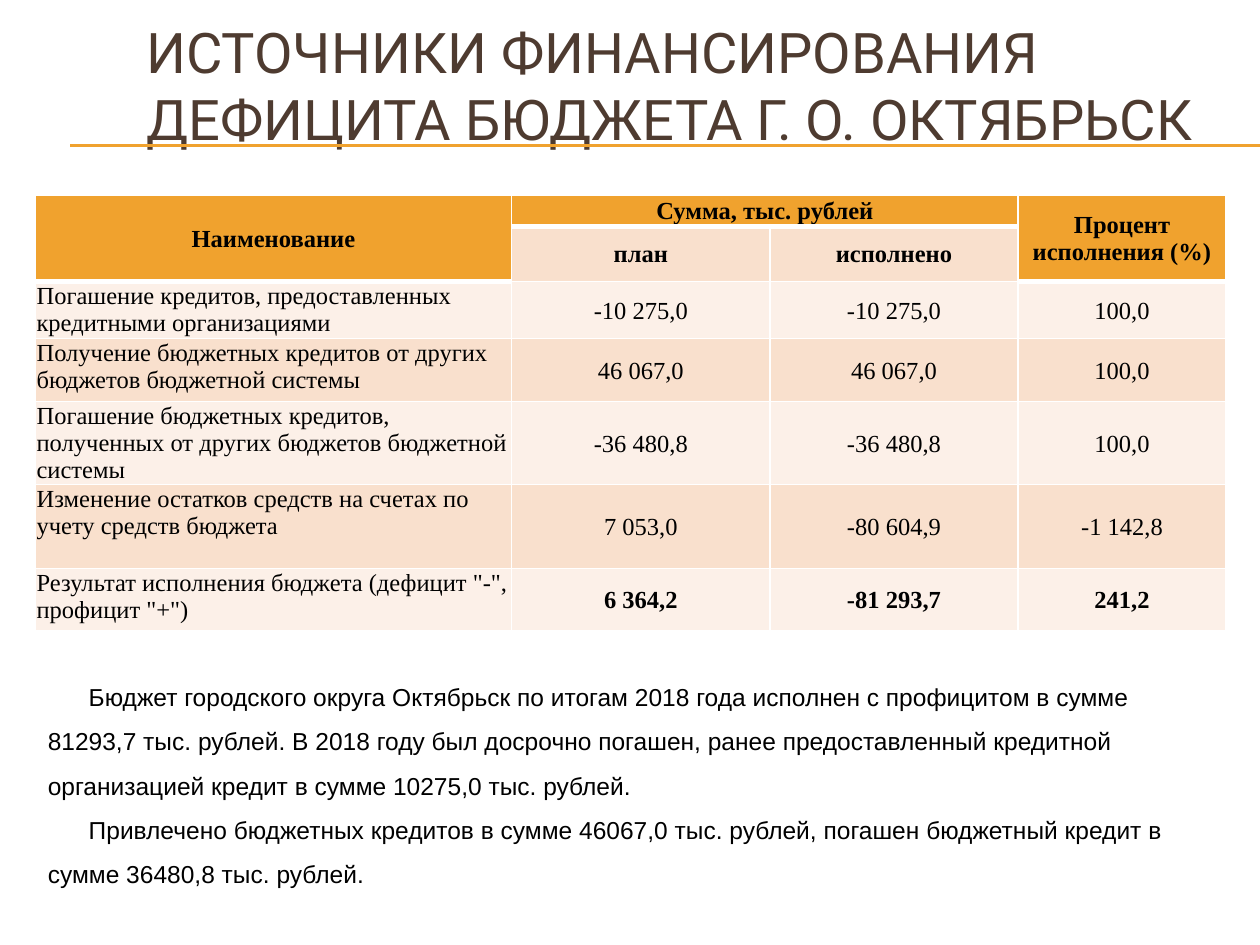
from dataclasses import dataclass

from lxml import etree
from pptx import Presentation
from pptx.dml.color import RGBColor
from pptx.enum.shapes import MSO_CONNECTOR
from pptx.enum.text import MSO_ANCHOR, MSO_AUTO_SIZE, PP_ALIGN
from pptx.oxml import parse_xml
from pptx.oxml.ns import nsdecls, qn
from pptx.util import Pt

STRAIGHT = MSO_CONNECTOR.STRAIGHT
TOP, MIDDLE = MSO_ANCHOR.TOP, MSO_ANCHOR.MIDDLE
LEFT, CENTER = PP_ALIGN.LEFT, PP_ALIGN.CENTER


@dataclass(frozen=True)
class Theme:
    accent: str = "F0A22E"
    light: str = "FCF0E8"
    medium: str = "F9E0CD"
    white: str = "FFFFFF"
    brown: str = "4E3B30"
    black: str = "000000"
    title_font: str = "Roboto"
    table_font: str = "Times New Roman"
    body_font: str = "Arial"
    title_size: int = 32
    text_size: int = 14
    thin: int = 1
    thick: int = 3


@dataclass(frozen=True)
class Box:
    left: float
    top: float
    width: float
    height: float

    def lengths(self) -> tuple:
        return Pt(self.left), Pt(self.top), Pt(self.width), Pt(self.height)


@dataclass(frozen=True)
class BudgetRow:
    name: str
    plan: str
    actual: str
    percent: str
    height: float
    bold: bool = False

    def texts(self) -> tuple:
        return self.name, self.plan, self.actual, self.percent


THEME = Theme()
TITLE = "ИСТОЧНИКИ ФИНАНСИРОВАНИЯ ДЕФИЦИТА БЮДЖЕТА Г. О. ОКТЯБРЬСК"
TITLE_BOX = Box(76.3, 15.1, 625.7, 66.2)
TABLE_BOX = Box(20.2, 111.6, 680.4, 248.8)
NOTE_BOX = Box(20.2, 378, 680.4, 151.2)
RULE_TOPS = (82.8, 83.5)
COLUMN_WIDTHS = (272.2, 147.6, 141.8, 118.8)
ROWS = (
    BudgetRow("Наименование", "Сумма, тыс. рублей", "", "Процент исполнения (%)", 17.7, True),
    BudgetRow("", "план", "исполнено", "", 31.4, True),
    BudgetRow("Погашение кредитов, предоставленных кредитными организациями",
              "-10 275,0", "-10 275,0", "100,0", 32.6),
    BudgetRow("Получение бюджетных кредитов от других бюджетов бюджетной системы",
              "46 067,0", "46 067,0", "100,0", 36),
    BudgetRow("Погашение бюджетных кредитов, полученных от других бюджетов бюджетной системы",
              "-36 480,8", "-36 480,8", "100,0", 47.4),
    BudgetRow("Изменение остатков средств на счетах по учету средств бюджета",
              "7 053,0", "-80 604,9", "-1 142,8", 48),
    BudgetRow('Результат исполнения бюджета (дефицит "-", профицит "+")',
              "6 364,2", "-81 293,7", "241,2", 35.7, True),
)
MERGES = (((0, 0), (1, 0)), ((0, 1), (0, 2)), ((0, 3), (1, 3)))
NOTES = (
    "Бюджет городского округа Октябрьск по итогам 2018 года исполнен с профицитом в сумме "
    "81293,7 тыс. рублей. В 2018 году был досрочно погашен, ранее предоставленный кредитной "
    "организацией кредит в сумме 10275,0 тыс. рублей.",
    "Привлечено бюджетных кредитов в сумме 46067,0 тыс. рублей, погашен бюджетный кредит в "
    "сумме 36480,8 тыс. рублей.",
)


def style_font(p, name: str, size: float, color: str, bold: bool = False) -> None:
    p.font.name = name
    p.font.size = Pt(size)
    p.font.bold = bold
    p.font.color.rgb = RGBColor.from_string(color)


def add_rule(s, top: float) -> None:
    rule = s.shapes.add_connector(STRAIGHT, Pt(40.3), Pt(top), Pt(720), Pt(top))
    rule.line.color.rgb = RGBColor.from_string(THEME.accent)
    rule.line.width = Pt(0.75)
    etree.SubElement(rule._element.spPr, qn("a:effectLst"))


def add_title(s) -> None:
    sp = s.shapes.title
    sp.left, sp.top, sp.width, sp.height = TITLE_BOX.lengths()
    tf = sp.text_frame
    tf.text = TITLE
    tf.word_wrap = True
    tf.auto_size = MSO_AUTO_SIZE.NONE
    tf.vertical_anchor = MIDDLE
    p = tf.paragraphs[0]
    p.alignment = LEFT
    style_font(p, THEME.title_font, THEME.title_size, THEME.brown)


def is_header(row: int, col: int) -> bool:
    return row == 0 or (row == 1 and col in (0, 3))


def set_borders(cell, top: float, bottom: float) -> None:
    tc_pr = cell._tc.get_or_add_tcPr()
    widths = {"lnL": THEME.thin, "lnR": THEME.thin, "lnT": top, "lnB": bottom}
    for i, (tag, width) in enumerate(widths.items()):
        tc_pr.insert(i, parse_xml(
            f'<a:{tag} {nsdecls("a")} w="{Pt(width)}"><a:solidFill>'
            f'<a:srgbClr val="{THEME.white}"/></a:solidFill></a:{tag}>'))


def fill_cell(cell, row: int, col: int, text: str) -> None:
    header = is_header(row, col)
    is_name = col == 0 and not header
    band = THEME.medium if row % 2 else THEME.light
    cell.fill.solid()
    cell.fill.fore_color.rgb = RGBColor.from_string(THEME.accent if header else band)
    cell.margin_left = cell.margin_right = cell.margin_top = Pt(0.7)
    cell.margin_bottom = Pt(0)
    cell.vertical_anchor = TOP if is_name else MIDDLE
    below_header = row > 0 and is_header(row - 1, col)
    set_borders(cell, THEME.thick if below_header else THEME.thin,
                THEME.thick if header else THEME.thin)
    cell.text = text
    p = cell.text_frame.paragraphs[0]
    p.alignment = LEFT if is_name else CENTER
    style_font(p, THEME.table_font, THEME.text_size, THEME.black,
               ROWS[row].bold and not is_name)


def add_budget_table(s) -> None:
    table = s.shapes.add_table(len(ROWS), len(COLUMN_WIDTHS), *TABLE_BOX.lengths()).table
    table.first_row = table.horz_banding = False
    for column, width in zip(table.columns, COLUMN_WIDTHS):
        column.width = Pt(width)
    for r, row in enumerate(ROWS):
        table.rows[r].height = Pt(row.height)
        for c, text in enumerate(row.texts()):
            fill_cell(table.cell(r, c), r, c, text)
    for first, last in MERGES:
        table.cell(*first).merge(table.cell(*last))


def add_notes_text(s) -> None:
    tf = s.shapes.add_textbox(*NOTE_BOX.lengths()).text_frame
    tf.word_wrap = True
    for i, text in enumerate(NOTES):
        p = tf.add_paragraph() if i else tf.paragraphs[0]
        p.text = text
        p.line_spacing = 1.5
        p._p.get_or_add_pPr().set("indent", str(Pt(23.4)))
        style_font(p, THEME.body_font, THEME.text_size, THEME.black)


def main() -> None:
    prs = Presentation()
    prs.slide_width, prs.slide_height = Pt(720), Pt(540)
    s = prs.slides.add_slide(prs.slide_layouts[5])
    for top in RULE_TOPS:
        add_rule(s, top)
    add_title(s)
    add_budget_table(s)
    add_notes_text(s)
    prs.save("out.pptx")


if __name__ == "__main__":
    main()
